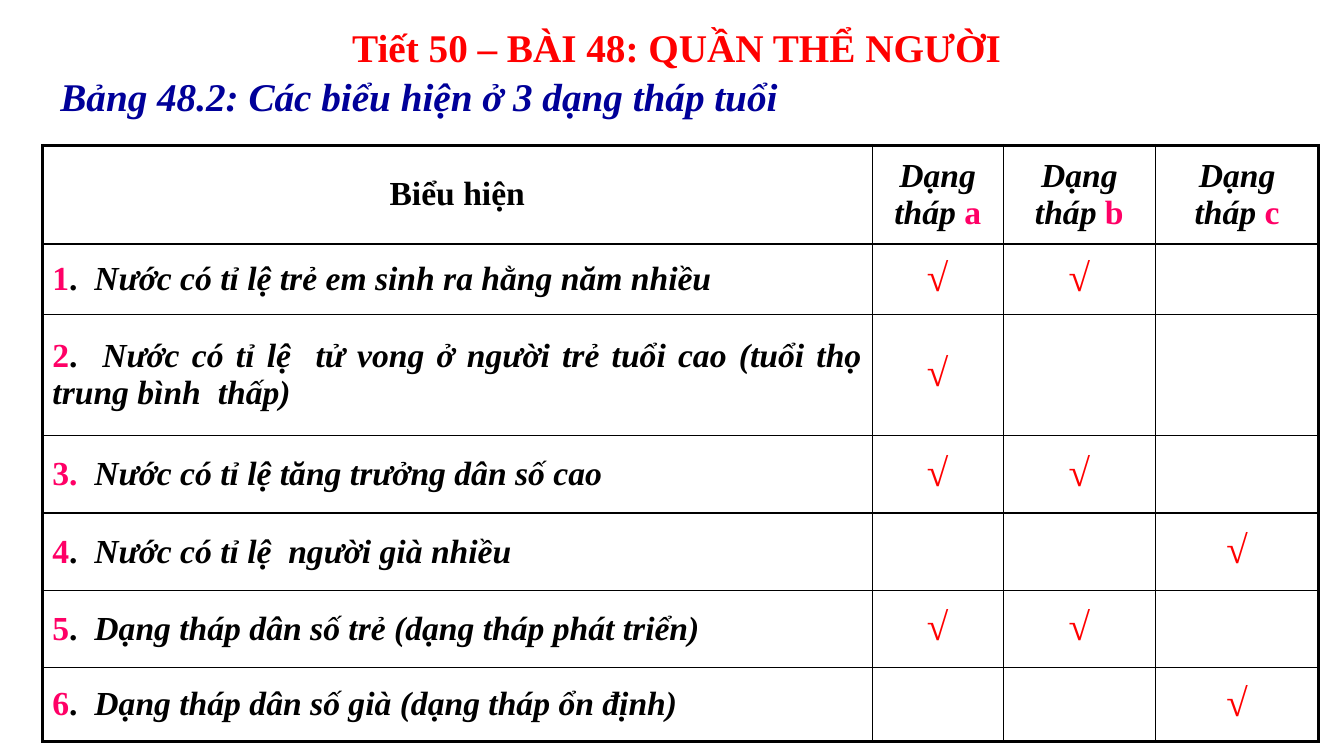
"""Build the slide comparing three age pyramid types in a ticked table."""
import pptx
import pptx.dml.color
import pptx.enum.text
import pptx.oxml
import pptx.oxml.ns
import pptx.util

Inches = pptx.util.Inches
RGB = pptx.dml.color.RGBColor.from_string
ALIGN = pptx.enum.text.PP_ALIGN
MIDDLE = pptx.enum.text.MSO_ANCHOR.MIDDLE
FIT = pptx.enum.text.MSO_AUTO_SIZE.SHAPE_TO_FIT_TEXT

THEME = {
    "font": "Times New Roman", "heading": 28, "body": 24, "thin": 1, "thick": 2.25,
    "paper": "FFFFFF", "ink": "000000", "accent": "FF0066", "red": "FF0000", "navy": "000099",
}
COLUMNS = [8.23, 1.3, 1.51, 1.62]
ROWS = [0.98, 0.7, 1.2, 0.77, 0.77, 0.76, 0.74]
LEFT, TOP = 0.42, 1.44
LINE_HEIGHT, TICK_WIDTH, TICK_LIFT = 0.57, 1, 0.32
PYRAMIDS = "abc"
SIGNS = [
    ("1", ".  ", "Nước có tỉ lệ trẻ em sinh ra hằng năm nhiều", "ab"),
    ("2", ".  ", "Nước có tỉ lệ  tử vong ở người trẻ tuổi cao (tuổi thọ trung bình  thấp)", "a"),
    ("3.  ", "", "Nước có tỉ lệ tăng trưởng dân số cao", "ab"),
    ("4", ".  ", "Nước có tỉ lệ  người già nhiều", "c"),
    ("5", ".  ", "Dạng tháp dân số trẻ (dạng tháp phát triển)", "ab"),
    ("6", ".  ", "Dạng tháp dân số già (dạng tháp ổn định)", "c"),
]


def write(frame, align, size, *pieces):
    """Fill the first paragraph with (text, colour, italic) pieces."""
    paragraph = frame.paragraphs[0]
    paragraph.alignment = align
    for text, colour, italic in pieces:
        if text:
            run = paragraph.add_run()
            run.text = text
            look = {"name": THEME["font"], "size": pptx.util.Pt(THEME[size]),
                    "bold": True, "italic": italic}
            for key, value in look.items():
                setattr(run.font, key, value)
            run.font.color.rgb = RGB(THEME[colour])


def add_line(left, top, width, align, *pieces):
    """Add a one-line heading-size text box."""
    box = slide.shapes.add_textbox(*map(Inches, (left, top, width, LINE_HEIGHT)))
    box.text_frame.word_wrap = True
    box.text_frame.auto_size = FIT
    write(box.text_frame, align, "heading", *pieces)


deck = pptx.Presentation()
deck.slide_width, deck.slide_height = Inches(13.33), Inches(7.5)
slide = deck.slides.add_slide(deck.slide_layouts[5])

lesson = slide.shapes.title
lesson_place = {"left": 3.17, "top": 0.18, "width": 7.08, "height": LINE_HEIGHT}
for side, length in lesson_place.items():
    setattr(lesson, side, Inches(length))
lesson.text_frame.auto_size = FIT
lesson.text_frame.vertical_anchor = pptx.enum.text.MSO_ANCHOR.TOP
write(lesson.text_frame, ALIGN.CENTER, "heading",
      ("Tiết 50 – BÀI 48: QUẦN THỂ NGƯỜI", "red", False))

add_line(0.5, 0.67, 9.75, ALIGN.LEFT,
         ("Bảng 48.2: Các biểu hiện ở 3 dạng tháp tuổi", "navy", True))

comparison = slide.shapes.add_table(
    len(ROWS), len(COLUMNS), *map(Inches, (LEFT, TOP, sum(COLUMNS), sum(ROWS)))).table
comparison.first_row = comparison.horz_banding = False
for column, width in zip(comparison.columns, COLUMNS):
    column.width = Inches(width)
for row, height in zip(comparison.rows, ROWS):
    row.height = Inches(height)

for r in range(len(ROWS)):
    for c in range(len(COLUMNS)):
        cell = comparison.cell(r, c)
        cell.vertical_anchor = MIDDLE
        outer = {"L": c == 0, "R": c == len(COLUMNS) - 1, "T": r == 0, "B": r == len(ROWS) - 1}
        for side, is_outer in outer.items():
            weight = pptx.util.Pt(THEME["thick" if is_outer else "thin"])
            cell._tc.get_or_add_tcPr().append(pptx.oxml.parse_xml(
                f'<a:ln{side} {pptx.oxml.ns.nsdecls("a")} w="{weight}"><a:solidFill>'
                f'<a:srgbClr val="{THEME["ink"]}"/></a:solidFill></a:ln{side}>'))
        cell.fill.solid()
        cell.fill.fore_color.rgb = RGB(THEME["paper"])

write(comparison.cell(0, 0).text_frame, ALIGN.CENTER, "body", ("Biểu hiện", "ink", False))
for c, pyramid in enumerate(PYRAMIDS, 1):
    write(comparison.cell(0, c).text_frame, ALIGN.CENTER, "body",
          ("Dạng tháp", "ink", True), (f" {pyramid}", "accent", False))

for r, (number, stop, sign, ticked) in enumerate(SIGNS, 1):
    write(comparison.cell(r, 0).text_frame, ALIGN.JUSTIFY, "body",
          (number, "accent", False), (stop, "ink", False), (sign, "ink", True))
    row_middle = TOP + sum(ROWS[:r]) + ROWS[r] / 2
    for pyramid in ticked:
        c = PYRAMIDS.index(pyramid) + 1
        column_middle = LEFT + sum(COLUMNS[:c]) + COLUMNS[c] / 2
        add_line(column_middle - TICK_WIDTH / 2, row_middle - TICK_LIFT, TICK_WIDTH,
                 ALIGN.CENTER, ("√", "red", False))

deck.save("out.pptx")
